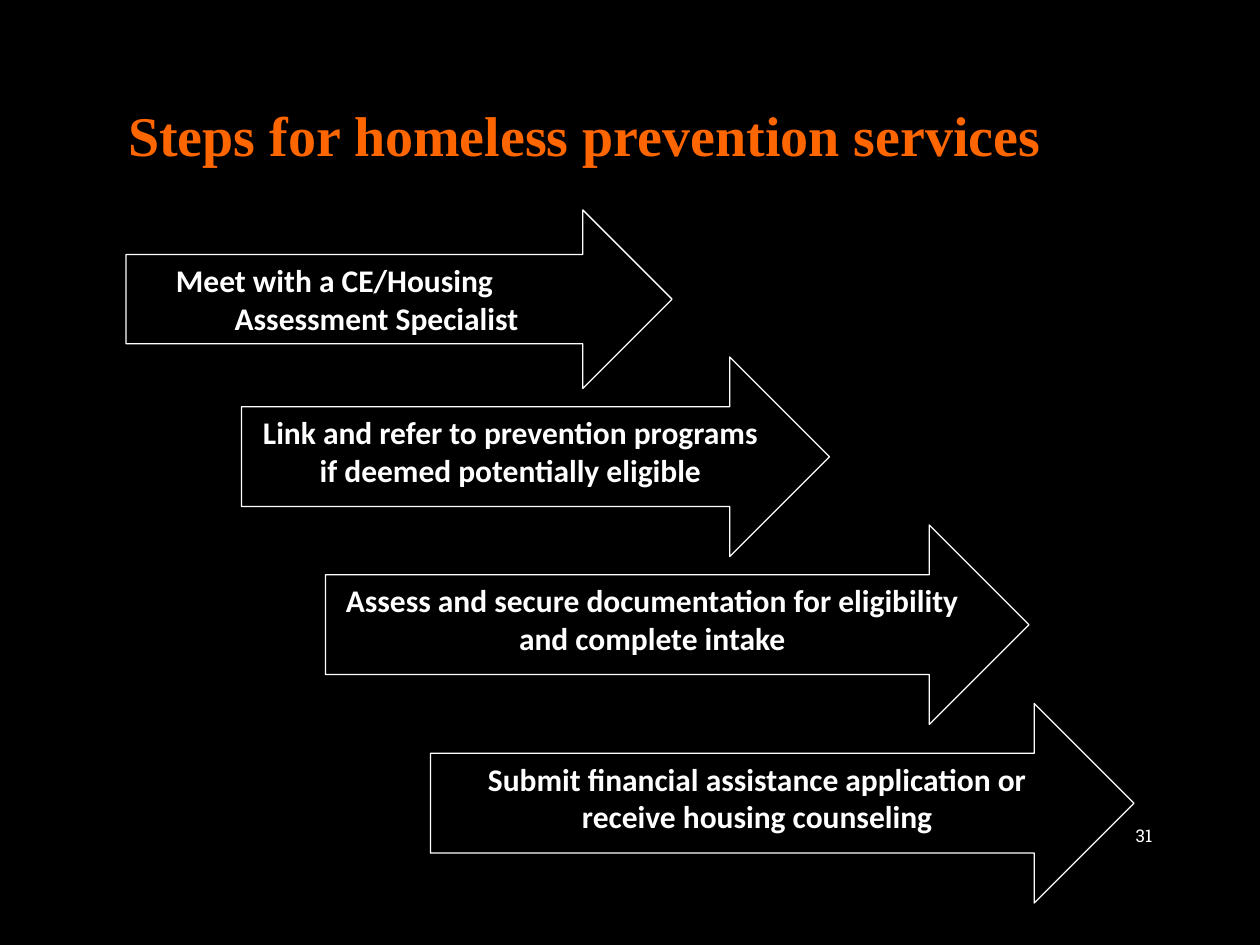
"""Build the slide showing four cascading steps for homeless prevention services."""
from pptx import Presentation
from pptx.dml.color import RGBColor
from pptx.enum.shapes import MSO_SHAPE
from pptx.enum.text import MSO_ANCHOR, PP_ALIGN
from pptx.util import Pt

BLACK = RGBColor(0x00, 0x00, 0x00)
WHITE = RGBColor(0xFF, 0xFF, 0xFF)
ORANGE = RGBColor(0xFF, 0x66, 0x00)
HANGING_INDENT = Pt(48)
STEPS = [
    ("Meet with a CE/Housing Assessment Specialist", 72, 120, 312, 102),
    ("Link and refer to prevention programs if deemed potentially eligible", 138, 204, 336, 114),
    ("Assess and secure documentation for eligibility and complete intake", 186, 300, 402, 114),
    ("Submit financial assistance application or receive housing counseling", 246, 402, 402, 114),
]


def write_text(shape, text, font_name, size, color, alignment, anchor, bold=False):
    frame = shape.text_frame
    frame.word_wrap = True
    frame.vertical_anchor = anchor
    frame.text = text
    paragraph = frame.paragraphs[0]
    paragraph.alignment = alignment
    paragraph.font.name = font_name
    paragraph.font.size = Pt(size)
    paragraph.font.bold = bold
    paragraph.font.color.rgb = color
    return paragraph


presentation = Presentation()
presentation.slide_width, presentation.slide_height = Pt(720), Pt(540)
slide = presentation.slides.add_slide(presentation.slide_layouts[5])
slide.background.fill.solid()
slide.background.fill.fore_color.rgb = BLACK

title = slide.shapes.title
title.left, title.top, title.width, title.height = Pt(66), Pt(54), Pt(582), Pt(45)
write_text(title, "Steps for homeless prevention services", "Times New Roman", 32,
           ORANGE, PP_ALIGN.LEFT, MSO_ANCHOR.TOP, bold=True)

page_number = slide.shapes.add_textbox(Pt(620.5), Pt(463), Pt(45), Pt(29))
write_text(page_number, "31", "Roboto Slab", 10, WHITE, PP_ALIGN.RIGHT, MSO_ANCHOR.MIDDLE)

arrows, paragraphs = [], []
for text, left, top, width, height in STEPS:
    arrow = slide.shapes.add_shape(MSO_SHAPE.RIGHT_ARROW, Pt(left), Pt(top), Pt(width), Pt(height))
    arrow.shadow.inherit = False
    arrow.fill.background()
    arrow.line.color.rgb = WHITE
    arrow.line.width = Pt(0.75)
    paragraph = write_text(arrow, text, "Calibri", 18, WHITE, PP_ALIGN.CENTER,
                           MSO_ANCHOR.TOP, bold=True)
    paragraph.space_after = Pt(8)
    arrows.append(arrow)
    paragraphs.append(paragraph)

first_properties = paragraphs[0]._p.get_or_add_pPr()
first_properties.set("marL", str(HANGING_INDENT))
first_properties.set("indent", str(-HANGING_INDENT))
arrows[0].text_frame.margin_right += HANGING_INDENT

presentation.save("out.pptx")
